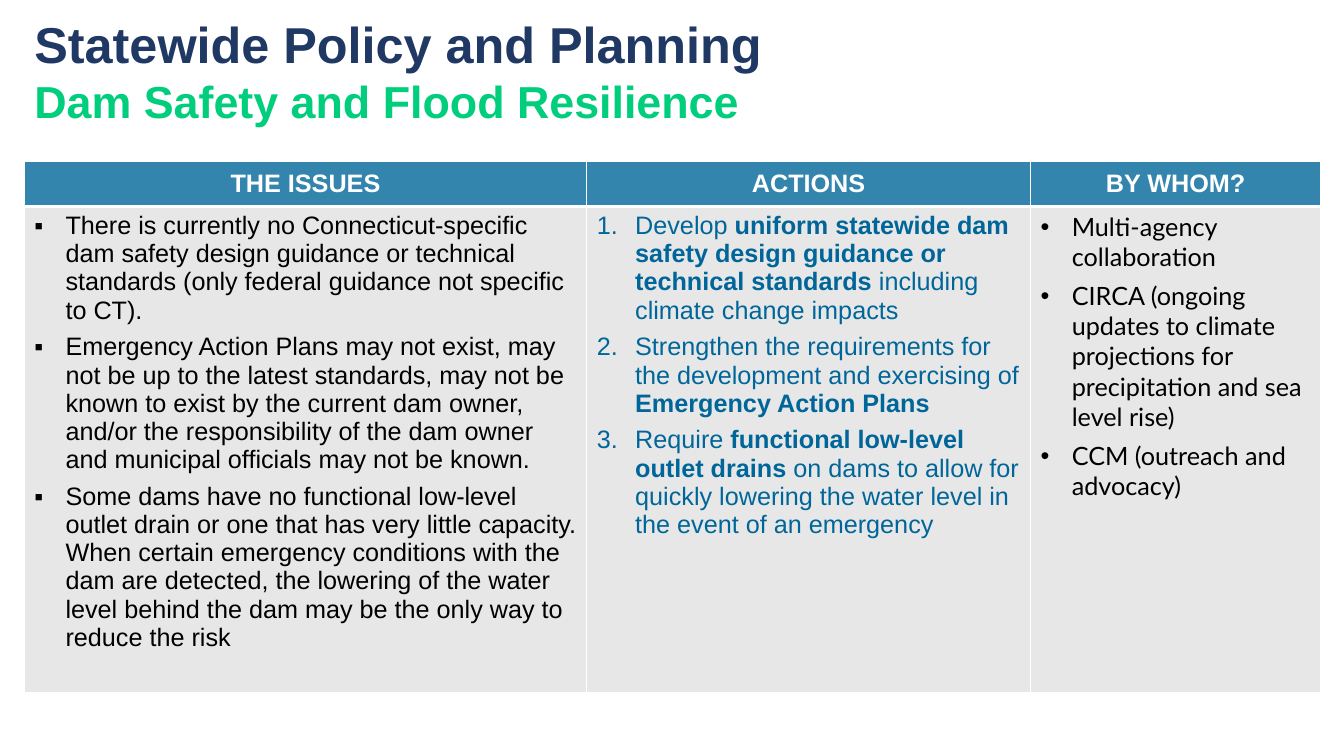
import pptx
import pptx.util
import pptx.dml.color
import pptx.enum.text
import pptx.oxml.ns
import lxml.etree

Inches = pptx.util.Inches
Pt = pptx.util.Pt
RGBColor = pptx.dml.color.RGBColor
ALIGN = pptx.enum.text.PP_ALIGN
ANCHOR = pptx.enum.text.MSO_ANCHOR

NAVY = RGBColor(0x20, 0x38, 0x64)
GREEN = RGBColor(0x00, 0xCE, 0x7D)
HEADER_BLUE = RGBColor(0x33, 0x85, 0xAD)
ACTION_BLUE = RGBColor(0x00, 0x66, 0x99)
GRAY = RGBColor(0xE7, 0xE7, 0xE7)
WHITE = RGBColor(0xFF, 0xFF, 0xFF)
BLACK = RGBColor(0x00, 0x00, 0x00)

# Content: each paragraph is a list of runs; every second run is bold
TITLE_LINES = [
    ("Statewide Policy and Planning", 36, NAVY),
    ("Dam Safety and Flood Resilience", 32, GREEN),
]
ISSUES = [
    ["There is currently no Connecticut-specific dam safety design guidance or "
     "technical standards (only federal guidance not specific to CT)."],
    ["Emergency Action Plans may not exist, may not be up to the latest standards, "
     "may not be known to exist by the current dam owner, and/or the responsibility "
     "of the dam owner and municipal officials may not be known."],
    ["Some dams have no functional low-level outlet drain or one that has very little "
     "capacity. When certain emergency conditions with the dam are detected, the "
     "lowering of the water level behind the dam may be the only way to reduce the risk"],
]
ACTIONS = [
    ["Develop ", "uniform statewide dam safety design guidance or technical standards ",
     "including climate change impacts"],
    ["Strengthen the requirements for the development and exercising of ",
     "Emergency Action Plans"],
    ["Require ", "functional low-level outlet drains ",
     "on dams to allow for quickly lowering the water level in the event of an emergency"],
]
AGENCIES = [
    ["Multi-agency collaboration"],
    ["CIRCA (ongoing updates to climate projections for precipitation and sea level rise)"],
    ["CCM (outreach and advocacy)"],
]
# Heading, width, paragraphs, bullet (None = numbered), indent, font, colour
COLUMNS = [
    ("THE ISSUES", 5.58, ISSUES, "▪", 0.31, "Arial", BLACK),
    ("ACTIONS", 4.4, ACTIONS, None, 0.38, "Arial", ACTION_BLUE),
    ("BY WHOM?", 2.88, AGENCIES, "•", 0.31, "Lato", BLACK),
]
ROW_HEIGHTS = [0.45, 4.82]
LEFT, WIDTH, TABLE_TOP = 0.24, 12.86, 1.6


def add_span(para, text, size, font, color, bold):
    span = para.add_run()
    span.text = text
    span.font.size = Pt(size)
    span.font.name = font
    span.font.color.rgb = color
    span.font.bold = bold


def add_element(parent, tag, **attributes):
    return lxml.etree.SubElement(parent, pptx.oxml.ns.qn(tag), attributes)


def set_bullet(para, bullet, indent):
    properties = para._p.get_or_add_pPr()
    properties.set("marL", str(Inches(indent)))
    properties.set("indent", str(-Inches(indent)))
    if bullet:
        add_element(properties, "a:buFont", typeface="Arial")
        add_element(properties, "a:buChar", char=bullet)
    else:
        add_element(properties, "a:buFont", typeface="+mj-lt")
        add_element(properties, "a:buAutoNum", type="arabicPeriod")


def style_cell(cell, fill, top, bottom):
    properties = cell._tc.get_or_add_tcPr()
    for side, points in (("L", 1), ("R", 1), ("T", top), ("B", bottom)):
        line = add_element(properties, "a:ln" + side, w=str(Pt(points)))
        add_element(add_element(line, "a:solidFill"), "a:srgbClr", val=str(WHITE))
    cell.fill.solid()
    cell.fill.fore_color.rgb = fill


deck = pptx.Presentation()
deck.slide_width, deck.slide_height = Inches(13.33), Inches(7.5)
page = deck.slides.add_slide(deck.slide_layouts[5])

# Title
title = page.shapes.title
title.left, title.top = Inches(LEFT), Inches(0.4)
title.width, title.height = Inches(WIDTH), Inches(0.59)
title.text_frame.vertical_anchor = ANCHOR.MIDDLE
title.text_frame.auto_size = pptx.enum.text.MSO_AUTO_SIZE.NONE
heading = title.text_frame.paragraphs[0]
heading.alignment = ALIGN.LEFT
for index, (text, size, color) in enumerate(TITLE_LINES):
    if index:
        heading.add_line_break()
    add_span(heading, text, size, "Arial", color, True)

# Table
table = page.shapes.add_table(
    len(ROW_HEIGHTS), len(COLUMNS), Inches(LEFT), Inches(TABLE_TOP),
    Inches(WIDTH), Inches(sum(ROW_HEIGHTS))).table
for row, height in zip(table.rows, ROW_HEIGHTS):
    row.height = Inches(height)

for index, (label, width, items, bullet, indent, font, color) in enumerate(COLUMNS):
    table.columns[index].width = Inches(width)

    # Header cell
    header = table.cell(0, index)
    style_cell(header, HEADER_BLUE, 1, 3)
    header.vertical_anchor = ANCHOR.MIDDLE
    para = header.text_frame.paragraphs[0]
    para.alignment = ALIGN.CENTER
    add_span(para, label, 18, "Arial", WHITE, True)

    # List cell
    body = table.cell(1, index)
    style_cell(body, GRAY, 3, 1)
    for number, runs in enumerate(items):
        frame = body.text_frame
        para = frame.add_paragraph() if number else frame.paragraphs[0]
        para.space_after = Pt(6)
        set_bullet(para, bullet, indent)
        for position, text in enumerate(runs):
            add_span(para, text, 18, font, color, position % 2 == 1)

deck.save("out.pptx")
